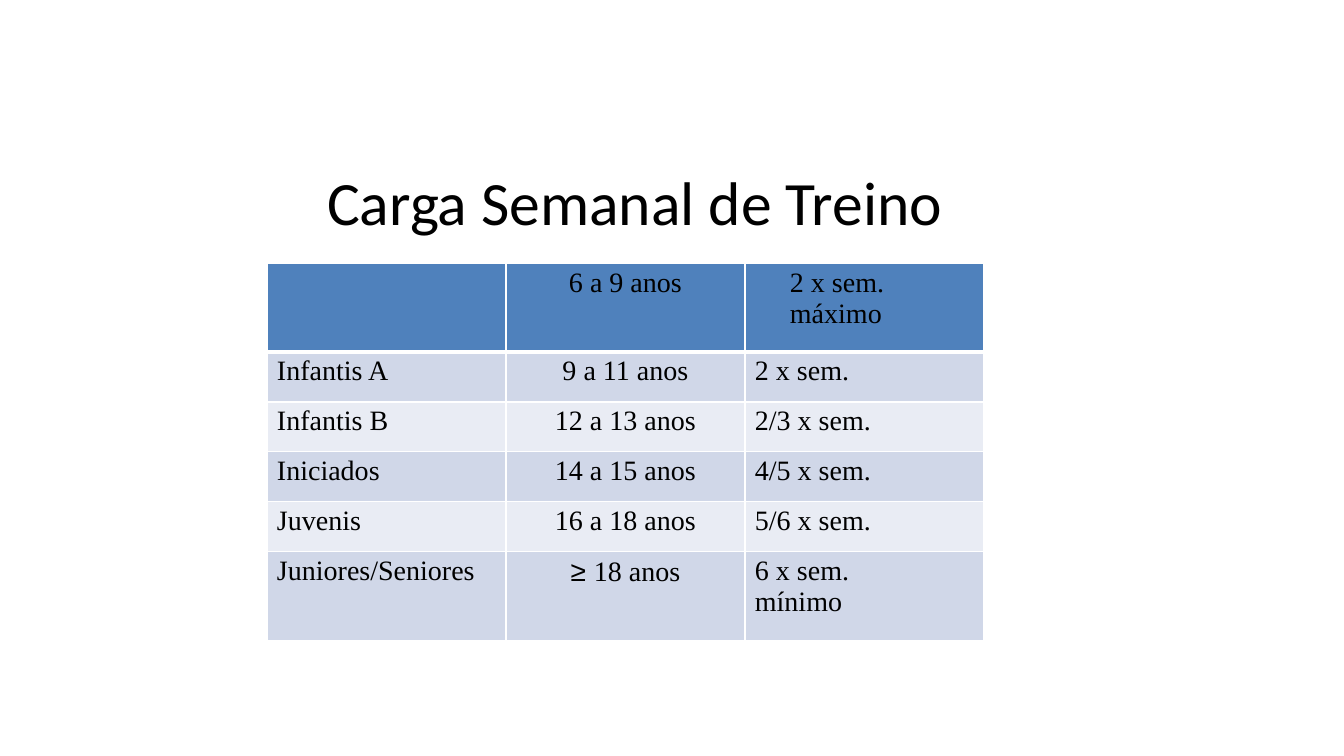
from lxml.etree import SubElement
from pptx import Presentation
from pptx.dml.color import RGBColor
from pptx.enum.text import MSO_ANCHOR, MSO_AUTO_SIZE, PP_ALIGN
from pptx.oxml.ns import qn
from pptx.util import Pt

SCALE = 914400 / 100.8
ROWS = [
    ("", "6 a 9 anos", "2 x sem. máximo"),
    ("Infantis A", "9 a 11 anos", "2 x sem."),
    ("Infantis B", "12 a 13 anos", "2/3 x sem."),
    ("Iniciados", "14 a 15 anos", "4/5 x sem."),
    ("Juvenis", "16 a 18 anos", "5/6 x sem."),
    ("Juniores/Seniores", "≥ 18 anos", "6 x sem. mínimo"),
]
HEAD, DARK, PALE = "4F81BC", "D0D7E8", "E9ECF4"
TALL, SHORT = 89, 50


def px(count):
    return round(count * SCALE)


def color(code):
    return RGBColor.from_string(code)


def style(run, face, size):
    run.font.name = face
    run.font.size = Pt(size)
    run.font.color.rgb = color("000000")


def inset(area, left, top, right=0):
    """Set the margins of a text frame or a table cell."""
    area.margin_left, area.margin_top = px(left), px(top)
    area.margin_right, area.margin_bottom = px(right), 0


def edge(cell, side, width):
    """Draw a white border on one side: L, R, T or B."""
    props = cell._tc.get_or_add_tcPr()
    line = SubElement(props, qn(f"a:ln{side}"), w=str(Pt(width)))
    fill = SubElement(line, qn("a:solidFill"))
    SubElement(fill, qn("a:srgbClr"), val="FFFFFF")


def add_title(slide, left, top, width, height):
    title = slide.shapes.title
    title.left, title.top = px(left), px(top)
    title.width, title.height = px(width), px(height)
    frame = title.text_frame
    frame.text = "Carga Semanal de Treino"
    frame.auto_size = MSO_AUTO_SIZE.NONE
    frame.vertical_anchor = MSO_ANCHOR.TOP
    inset(frame, 116, 55)
    para = frame.paragraphs[0]
    para.alignment = PP_ALIGN.LEFT
    style(para.runs[0], "Calibri", 44)


def fill_cell(cell, text, row, col):
    for side in "LRTB":
        thick = (row, side) in ((0, "B"), (1, "T"))
        edge(cell, side, 3 if thick else 1)
    cell.fill.solid()
    cell.fill.fore_color.rgb = color(HEAD if row == 0 else DARK if row % 2 else PALE)
    cell.vertical_anchor = MSO_ANCHOR.TOP

    # Long loads wrap before the last word
    right = 80 if text.startswith(("2 x sem. m", "6 x")) else 0
    left = 0 if col == 1 else 45 if row == 0 else 10
    inset(cell, left, 4, right)

    para = cell.text_frame.paragraphs[0]
    para.alignment = PP_ALIGN.CENTER if col == 1 else PP_ALIGN.LEFT
    sign = "≥ " if text.startswith("≥") else ""
    for part, face in ((sign, "Arial"), (text[len(sign):], "Times New Roman")):
        if part:
            run = para.add_run()
            run.text = part
            style(run, face, 20)


def add_loads(slide, left, top, width):
    """Place the table of weekly training loads."""
    count = len(ROWS)
    heights = [TALL] + [SHORT] * (count - 2) + [TALL]
    frame = slide.shapes.add_table(
        count, 3, px(left), px(top), px(width), px(sum(heights)))
    table = frame.table
    for col in table.columns:
        col.width = px(width / 3)
    for row, (height, texts) in enumerate(zip(heights, ROWS)):
        table.rows[row].height = px(height)
        for col, text in enumerate(texts):
            fill_cell(table.cell(row, col), text, row, col)


def main():
    deck = Presentation()
    deck.slide_width, deck.slide_height = px(1344), px(756)
    slide = deck.slides.add_slide(deck.slide_layouts[5])
    add_title(slide, 211, 109, 849, 154)
    add_loads(slide, 267, 263, 717)
    deck.save("out.pptx")


if __name__ == "__main__":
    main()
